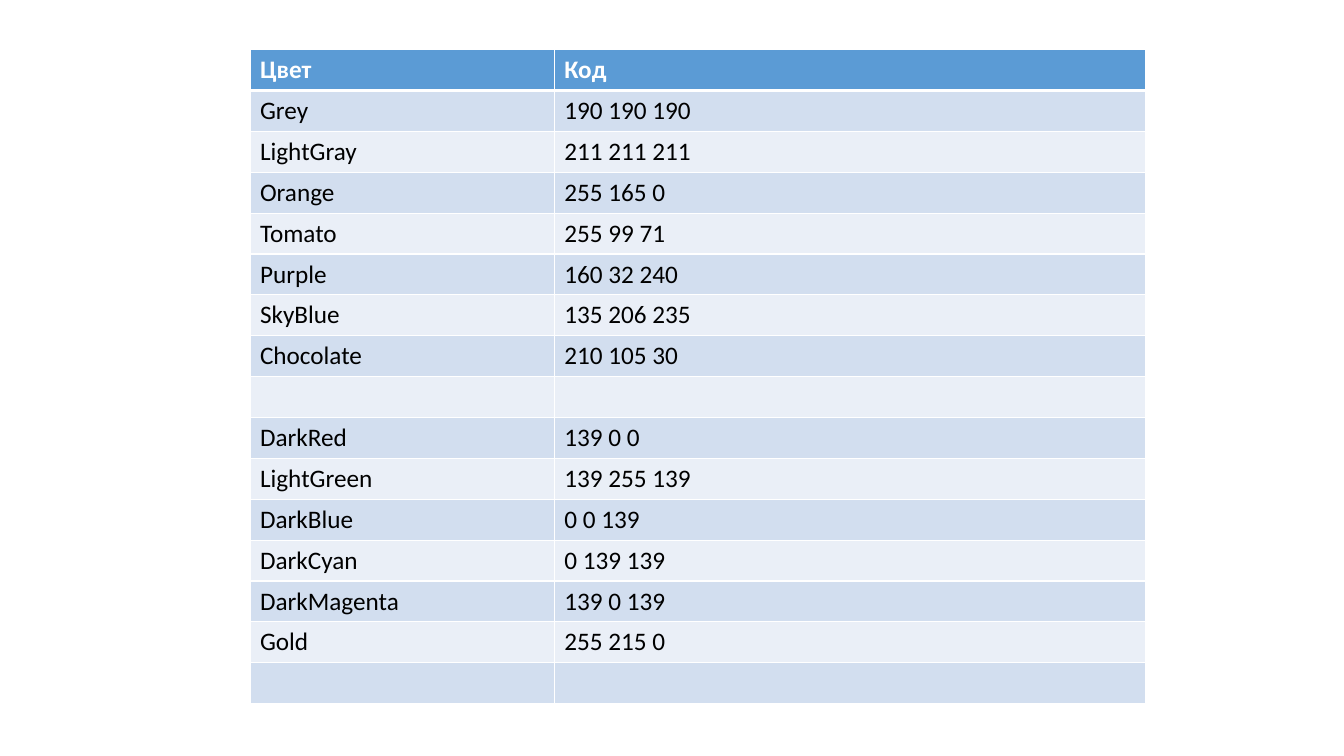
from lxml import etree
from pptx import Presentation
from pptx.dml.color import RGBColor
from pptx.oxml import ns
from pptx.util import Cm, Pt

# Content: the header, then one row per colour
ROWS = [
    ("Цвет", "Код"),
    ("Grey", "190 190 190"),
    ("LightGray", "211 211 211"),
    ("Orange", "255 165 0"),
    ("Tomato", "255 99 71"),
    ("Purple", "160 32 240"),
    ("SkyBlue", "135 206 235"),
    ("Chocolate", "210 105 30"),
    ("", ""),
    ("DarkRed", "139 0 0"),
    ("LightGreen", "139 255 139"),
    ("DarkBlue", "0 0 139"),
    ("DarkCyan", "0 139 139"),
    ("DarkMagenta", "139 0 139"),
    ("Gold", "255 215 0"),
    ("", ""),
]

WHITE = RGBColor(0xFF, 0xFF, 0xFF)
BLACK = RGBColor(0, 0, 0)
HEADER_BLUE = RGBColor(0x5B, 0x9B, 0xD5)
BANDS = (RGBColor(0xEA, 0xEF, 0xF7), RGBColor(0xD2, 0xDE, 0xEF))

LEFT, TOP = Cm(6.3), Cm(1.25)
COLUMN_WIDTHS = (Cm(7.67), Cm(14.91))
ROW_HEIGHT = Cm(1.03)


def set_border(cell, side, points):
    """Draw one white edge of a cell."""
    properties = cell._tc.get_or_add_tcPr()
    line = etree.SubElement(properties, ns.qn(f"a:ln{side}"), w=str(Pt(points)))
    fill = etree.SubElement(line, ns.qn("a:solidFill"))
    etree.SubElement(fill, ns.qn("a:srgbClr"), val=str(WHITE))


def fill_cell(cell, text, row_index):
    """Write and style one cell; a thick rule divides header and body."""
    is_header = row_index == 0
    thick_side = {0: "B", 1: "T"}.get(row_index)
    for side in "LRTB":
        set_border(cell, side, 3 if side == thick_side else 1)
    cell.fill.solid()
    cell.fill.fore_color.rgb = HEADER_BLUE if is_header else BANDS[row_index % 2]

    cell.text = text
    font = cell.text_frame.paragraphs[0].font
    font.name = "Calibri"
    font.size = Pt(18)
    font.bold = is_header
    font.color.rgb = WHITE if is_header else BLACK


# Slide
deck = Presentation()
deck.slide_width, deck.slide_height = Cm(33.87), Cm(19.05)
page = deck.slides.add_slide(deck.slide_layouts[6])

# Colour table
table = page.shapes.add_table(
    len(ROWS), len(COLUMN_WIDTHS), LEFT, TOP,
    sum(COLUMN_WIDTHS), ROW_HEIGHT * len(ROWS),
).table
for column, width in zip(table.columns, COLUMN_WIDTHS):
    column.width = width
for row_index, (row, texts) in enumerate(zip(table.rows, ROWS)):
    row.height = ROW_HEIGHT
    for cell, text in zip(row.cells, texts):
        fill_cell(cell, text, row_index)

deck.save("out.pptx")
